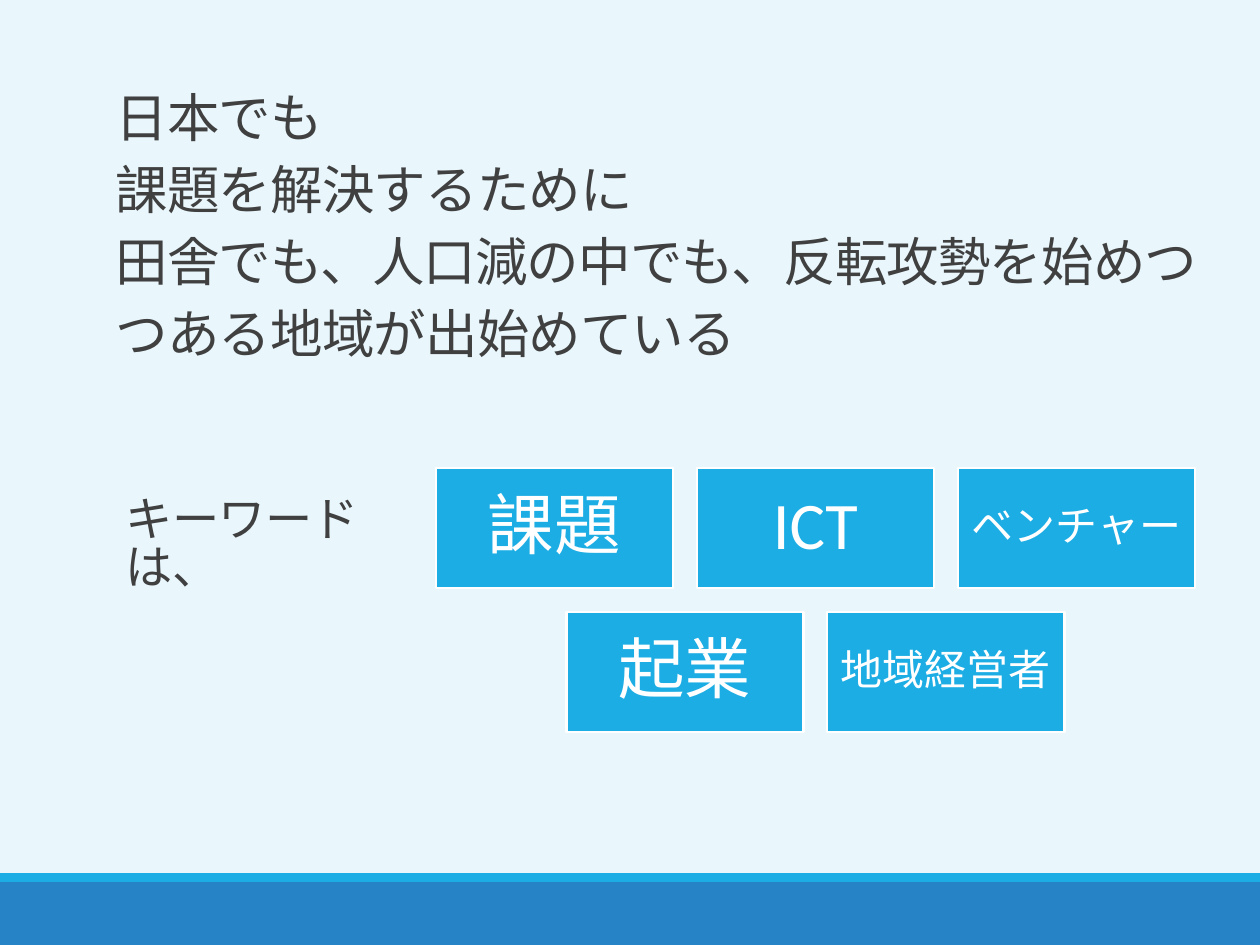
from pptx import Presentation
from pptx.dml.color import RGBColor
from pptx.enum.shapes import MSO_SHAPE
from pptx.enum.text import MSO_ANCHOR, MSO_AUTO_SIZE, PP_ALIGN
from pptx.util import Cm, Pt

# Content
STATEMENT = [
    "日本でも",
    "課題を解決するために",
    "田舎でも、人口減の中でも、反転攻勢を始めつつある地域が出始めている",
]
KEYWORD_LABEL = "キーワードは、"
# Rows of keywords: text, font size in points, inset in cm
KEYWORD_ROWS = [
    [("課題", 38, 0.4), ("ICT", 38, 0.4), ("ベンチャー", 24, 0.25)],
    [("起業", 38, 0.4), ("地域経営者", 24, 0.25)],
]

# Style and layout, lengths in cm
FONT = "Calibri"
BACKGROUND = RGBColor(0xE9, 0xF7, 0xFD)
BLUE = RGBColor(0x26, 0x83, 0xC6)
CYAN = RGBColor(0x1C, 0xAD, 0xE4)
GREY = RGBColor(0x40, 0x40, 0x40)
WHITE = RGBColor(0xFF, 0xFF, 0xFF)
SLIDE_WIDTH, SLIDE_HEIGHT = 25.4, 19.05
FOOTER_BARS = [(17.78, 1.27, BLUE), (17.6, 0.18, CYAN)]
BOX_WIDTH, BOX_HEIGHT = 4.78, 2.41
COLUMN_PITCH, ROW_PITCH = 5.26, 2.9
GRID_CENTER, GRID_TOP = 16.44, 9.44


def add_rectangle(slide, left, top, width, height, color):
    shape = slide.shapes.add_shape(
        MSO_SHAPE.RECTANGLE, Cm(left), Cm(top), Cm(width), Cm(height))
    shape.shadow.inherit = False
    shape.fill.solid()
    shape.fill.fore_color.rgb = color
    shape.line.fill.background()
    return shape


def write(shape, lines, size, color, line_spacing, align=PP_ALIGN.LEFT,
          anchor=MSO_ANCHOR.TOP, tracking=0):
    frame = shape.text_frame
    frame.word_wrap = True
    frame.auto_size = MSO_AUTO_SIZE.NONE
    frame.vertical_anchor = anchor
    frame.text = "\n".join(lines)
    for paragraph in frame.paragraphs:
        paragraph.alignment = align
        paragraph.line_spacing = line_spacing
        paragraph.space_before = paragraph.space_after = Pt(0)
        paragraph.font.name = FONT
        paragraph.font.size = Pt(size)
        paragraph.font.color.rgb = color
        if tracking:
            for run in paragraph.runs:
                run.font._element.set("spc", str(int(tracking * 100)))


def main():
    presentation = Presentation()
    presentation.slide_width, presentation.slide_height = Cm(SLIDE_WIDTH), Cm(SLIDE_HEIGHT)
    slide = presentation.slides.add_slide(presentation.slide_layouts[5])
    slide.background.fill.solid()
    slide.background.fill.fore_color.rgb = BACKGROUND

    # Footer bars
    for top, height, color in FOOTER_BARS:
        add_rectangle(slide, 0, top, SLIDE_WIDTH, height, color)

    # Statement
    title = slide.shapes.title
    title.left, title.top, title.width, title.height = Cm(2.08), Cm(1.4), Cm(22.58), Cm(5.36)
    write(title, STATEMENT, 30, GREY, Pt(41.2), tracking=-0.5)

    # Keyword label
    label = slide.shapes.add_textbox(Cm(2.29), Cm(9.91), Cm(5.82), Cm(1.83))
    write(label, [KEYWORD_LABEL], 27, GREY, 0.85, tracking=-0.5)

    # Keyword boxes, each row centred
    for row, keywords in enumerate(KEYWORD_ROWS):
        row_width = COLUMN_PITCH * (len(keywords) - 1) + BOX_WIDTH
        for column, (text, size, inset) in enumerate(keywords):
            box = add_rectangle(
                slide, GRID_CENTER - row_width / 2 + column * COLUMN_PITCH,
                GRID_TOP + row * ROW_PITCH, BOX_WIDTH, BOX_HEIGHT, CYAN)
            box.line.color.rgb = WHITE
            box.line.width = Pt(1.25)
            frame = box.text_frame
            frame.margin_left = frame.margin_right = Cm(inset)
            frame.margin_top = frame.margin_bottom = Cm(inset)
            write(box, [text], size, WHITE, 0.9, PP_ALIGN.CENTER, MSO_ANCHOR.MIDDLE)

    presentation.save("out.pptx")


if __name__ == "__main__":
    main()
